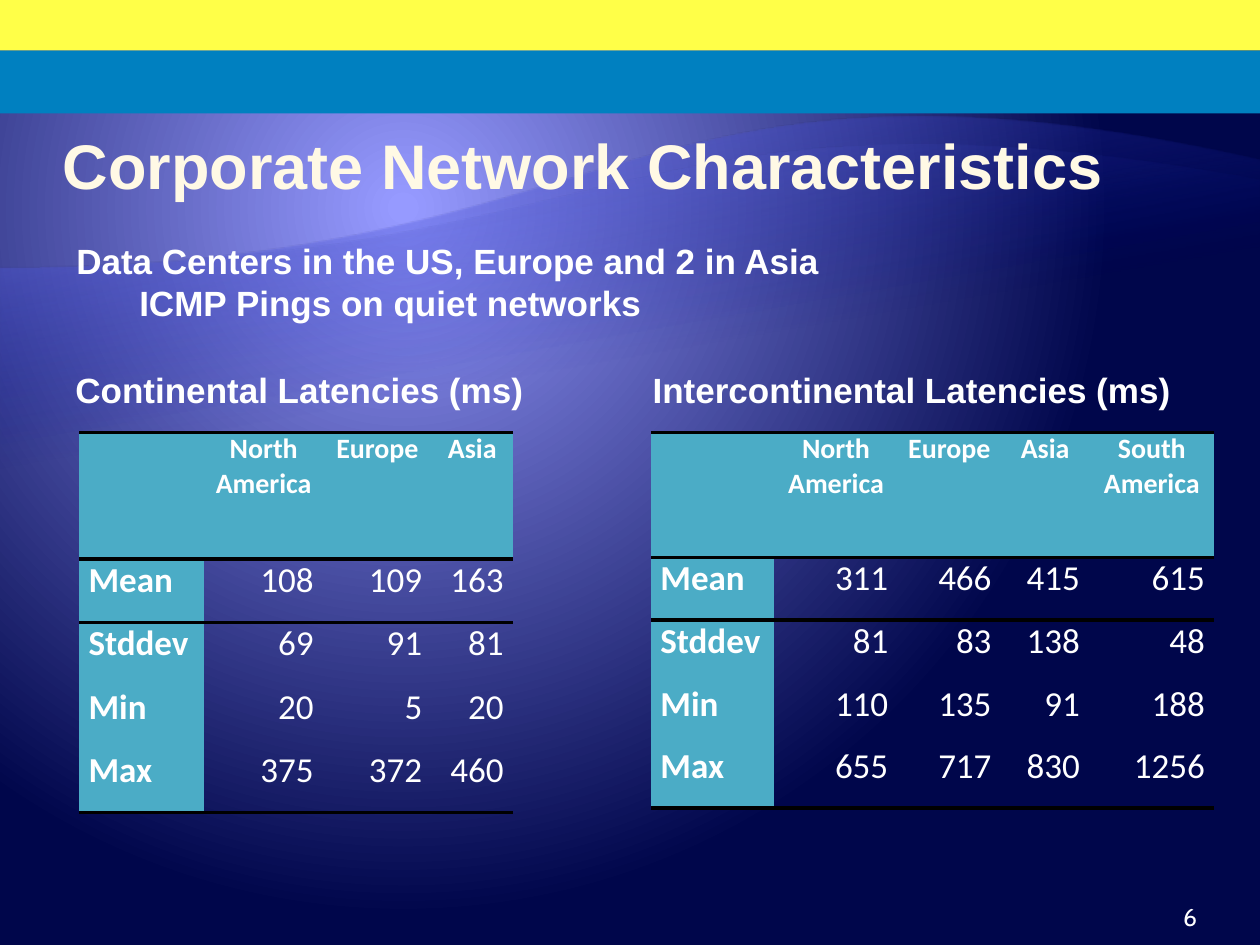
from dataclasses import dataclass

from lxml import etree
from pptx import Presentation
from pptx.dml.color import RGBColor
from pptx.enum.shapes import MSO_SHAPE as SHAPE
from pptx.enum.text import MSO_ANCHOR as ANCHOR, PP_ALIGN as ALIGN
from pptx.oxml import parse_xml
from pptx.oxml.ns import nsdecls, qn
from pptx.util import Pt


@dataclass(frozen=True)
class Theme:
    glow: str = "969AFF"
    night: str = "00064B"
    wave: str = "000D9E"
    wave_low: str = "797FFF"
    wave_high: str = "A3A7FF"
    blue: str = "0080C0"
    yellow: str = "FFFF48"
    cream: str = "FFF9E5"
    white: str = "FFFFFF"
    teal: str = "4BACC6"
    rule: str = "000000"
    heading_font: str = "Arial"
    table_font: str = "Calibri"
    number_font: str = "Cabin"
    title_size: int = 36
    body_size: int = 20
    header_size: int = 16
    number_size: int = 14
    rule_width: float = 2.25


THEME = Theme()
NO_STYLE = "{2D5ABB26-0587-4C30-8999-92F81FD0307C}"

CONTINENTAL = [
    ["", "North\nAmerica", "Europe", "Asia"],
    ["Mean", "108", "109", "163"],
    ["Stddev", "69", "91", "81"],
    ["Min", "20", "5", "20"],
    ["Max", "375", "372", "460"],
]
INTERCONTINENTAL = [
    ["", "North\nAmerica", "Europe", "Asia", "South America"],
    ["Mean", "311", "466", "415", "615"],
    ["Stddev", "81", "83", "138", "48"],
    ["Min", "110", "135", "91", "188"],
    ["Max", "655", "717", "830", "1256"],
]


def set_gradient(fill, element, stops, direction):
    """Give a fill gradient stops of (percent, colour, opacity percent)."""
    fill.solid()
    solid = element.find(".//" + qn("a:solidFill"))
    gs = "".join(
        f'<a:gs pos="{pos * 1000}"><a:srgbClr val="{color}">'
        f'<a:alpha val="{alpha * 1000}"/></a:srgbClr></a:gs>'
        for pos, color, alpha in stops)
    grad = parse_xml(f'<a:gradFill {nsdecls("a")} rotWithShape="1">'
                     f'<a:gsLst>{gs}</a:gsLst>{direction}</a:gradFill>')
    solid.getparent().replace(solid, grad)


def add_background(s):
    center = ('<a:path path="circle"><a:fillToRect l="32000" t="22000" '
              'r="68000" b="78000"/></a:path>')
    stops = [(0, THEME.glow, 100), (1, THEME.glow, 100), (90, THEME.night, 100)]
    set_gradient(s.background.fill, s._element, stops, center)


def add_plain_shape(s, kind, top, height):
    """Add a full-width shape without line or shadow."""
    sp = s.shapes.add_shape(kind, 0, Pt(top), Pt(720), Pt(height))
    sp.shadow.inherit = False
    sp.line.fill.background()
    return sp


def add_wave(s, top, height, color, opacity):
    sp = add_plain_shape(s, SHAPE.FLOWCHART_DOCUMENT, top, height)
    sp.rotation = 180
    stops = [(65, THEME.wave, 0), (100, color, opacity)]
    set_gradient(sp.fill, sp._element.spPr, stops,
                 '<a:lin ang="4800000" scaled="0"/>')


def add_band(s, top, height, color):
    sp = add_plain_shape(s, SHAPE.RECTANGLE, top, height)
    sp.fill.solid()
    sp.fill.fore_color.rgb = RGBColor.from_string(color)


def add_run(p, text, font, size, color=THEME.white, bold=False):
    """Add text as runs, with a line break at each newline."""
    for i, part in enumerate(text.split("\n")):
        if i:
            p.add_line_break()
        r = p.add_run()
        r.text = part
        r.font.name = font
        r.font.size = Pt(size)
        r.font.bold = bold
        r.font.color.rgb = RGBColor.from_string(color)


def add_text(s, box, lines, font=THEME.heading_font, size=THEME.body_size,
             color=THEME.white, bold=True, anchor=ANCHOR.BOTTOM,
             align=ALIGN.LEFT, insets=(7.2, 3.6, 7.2, 3.6)):
    """Add a text box; each line is (text, left indent)."""
    tf = s.shapes.add_textbox(*map(Pt, box)).text_frame
    tf.word_wrap = True
    tf.vertical_anchor = anchor
    (tf.margin_left, tf.margin_top,
     tf.margin_right, tf.margin_bottom) = map(Pt, insets)
    for i, (text, indent) in enumerate(lines):
        p = tf.add_paragraph() if i else tf.paragraphs[0]
        p.alignment = align
        if indent:
            p._p.get_or_add_pPr().set("marL", str(Pt(indent)))
        add_run(p, text, font, size, color, bold)


def set_rules(cell, sides):
    """Draw rules on the given sides, in the order lnT, lnB."""
    tcPr = cell._tc.get_or_add_tcPr()
    for i, side in enumerate(sides):
        ln = etree.Element(qn(f"a:{side}"), w=str(Pt(THEME.rule_width)))
        fill = etree.SubElement(ln, qn("a:solidFill"))
        etree.SubElement(fill, qn("a:srgbClr"), val=THEME.rule)
        tcPr.insert(i, ln)


def fill_cell(cell, text, is_header, is_label):
    cell.margin_left = cell.margin_right = Pt(5.4)
    cell.margin_top = cell.margin_bottom = 0
    if is_header or is_label:
        cell.fill.solid()
        cell.fill.fore_color.rgb = RGBColor.from_string(THEME.teal)
    else:
        cell.fill.background()
    if not text:
        return
    p = cell.text_frame.paragraphs[0]
    if is_header:
        p.alignment = ALIGN.CENTER
    else:
        p.alignment = ALIGN.LEFT if is_label else ALIGN.RIGHT
        p.space_after = Pt(10)
    size = THEME.header_size if is_header else THEME.body_size
    add_run(p, text, THEME.table_font, size, bold=is_header or is_label)


def add_latency_table(s, left, top, widths, row_height, rows):
    """Add a table whose header row is two rows high."""
    heights = [2 * row_height] + [row_height] * (len(rows) - 1)
    table = s.shapes.add_table(len(rows), len(widths), Pt(left), Pt(top),
                               Pt(sum(widths)), Pt(sum(heights))).table
    table._tbl.tblPr.find(qn("a:tableStyleId")).text = NO_STYLE
    table.first_row = table.horz_banding = False
    for column, width in zip(table.columns, widths):
        column.width = Pt(width)
    ruled = {0: ["lnT", "lnB"], 1: ["lnT"], len(rows) - 1: ["lnB"]}
    for i, (values, height) in enumerate(zip(rows, heights)):
        table.rows[i].height = Pt(height)
        for j, text in enumerate(values):
            cell = table.cell(i, j)
            fill_cell(cell, text, i == 0, j == 0)
            set_rules(cell, ruled.get(i, []))


def main():
    prs = Presentation()
    prs.slide_width, prs.slide_height = Pt(720), Pt(540)
    s = prs.slides.add_slide(prs.slide_layouts[6])

    # Backdrop and top bands
    add_background(s)
    add_wave(s, 60.5, 467.5, THEME.wave_low, 55)
    add_wave(s, 78, 380, THEME.wave_high, 30)
    add_band(s, 28.8, 36, THEME.blue)
    add_band(s, 0, 28.8, THEME.yellow)

    # Title and introduction
    add_text(s, (36, 65.5, 648, 50.5), [("Corporate Network Characteristics", 0)],
             size=THEME.title_size, color=THEME.cream, insets=(0, 0.7, 0, 0.7))
    add_text(s, (36.5, 133.2, 677.5, 55.5),
             [("Data Centers in the US, Europe and 2 in Asia", 0),
              ("ICMP Pings on quiet networks", 36)], anchor=ANCHOR.TOP)

    # Headings and tables
    for left, heading in [(36, "Continental Latencies (ms)"),
                          (365.8, "Intercontinental Latencies (ms)")]:
        add_text(s, (left, 198.7, 318.2, 39.6), [(heading, 0)])
    add_latency_table(s, 45.2, 247, [71.5, 68, 62, 46.5], 36.2, CONTINENTAL)
    add_latency_table(s, 372, 247, [70.5, 70.5, 59, 50.5, 71.5], 35.8,
                      INTERCONTINENTAL)

    # Slide number
    add_text(s, (642.2, 507, 41.8, 28.8), [("6", 0)], font=THEME.number_font,
             size=THEME.number_size, bold=False, align=ALIGN.RIGHT,
             insets=(7.2, 3.6, 0, 3.6))

    prs.save("out.pptx")


if __name__ == "__main__":
    main()
